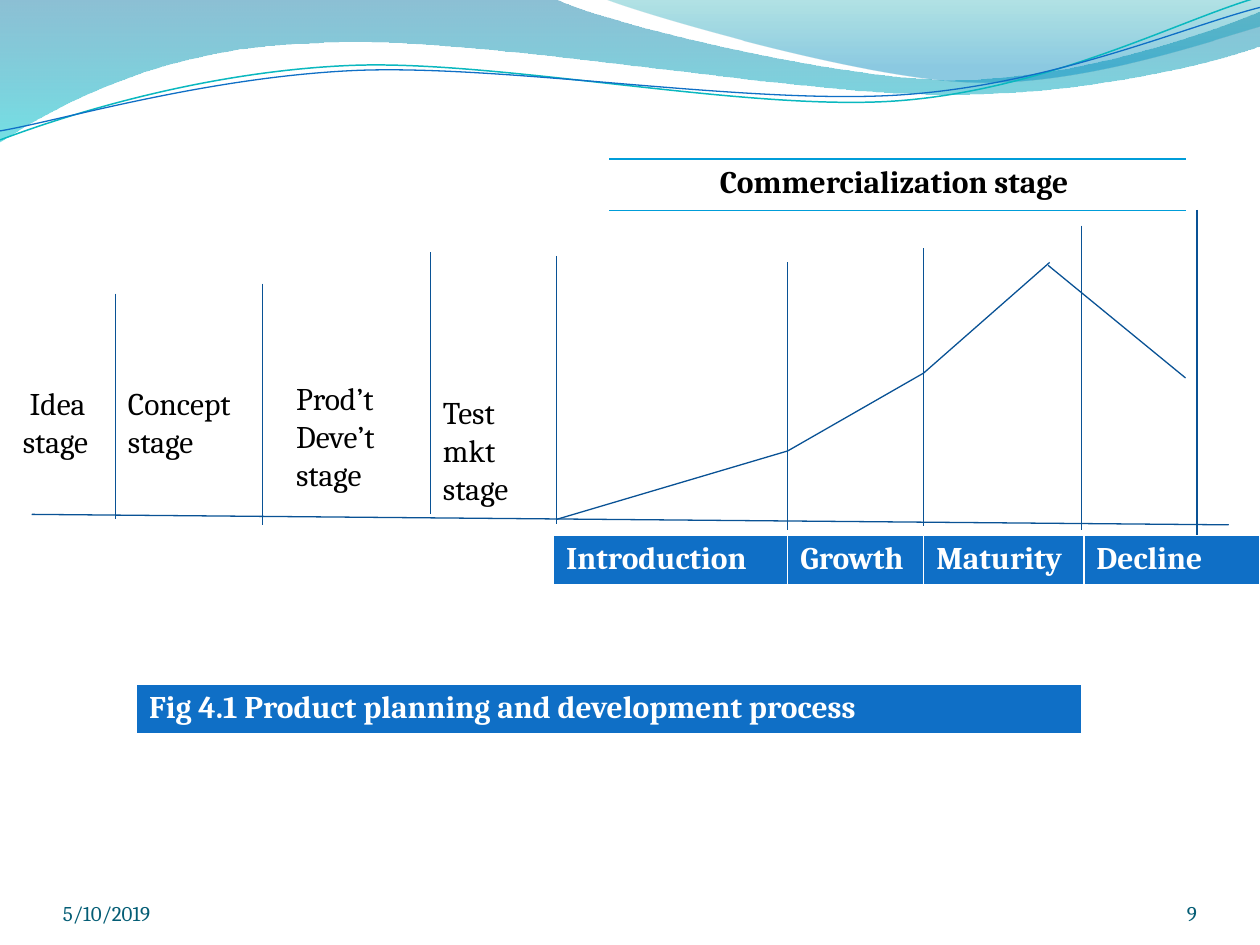
import math

from lxml import etree
from pptx import Presentation
from pptx import util as u
from pptx.dml.color import RGBColor
from pptx.enum import shapes, text
from pptx.oxml.ns import qn

FONT = "Cambria"
COLORS = {"black": "000000", "white": "FFFFFF", "blue": "0F6FC6", "line": "095295",
          "sky": "009DD9", "teal": "0AB8BF", "footer": "045D75", "deep": "0074A1",
          "aqua": "00C6CF", "green": "00A1A9", "azure": "008BBF"}

# All lengths are in centimetres. Outline steps: (x, y) is a straight line,
# (x1, y1, x2, y2, x, y) is a Bezier curve.
BANDS = [  # outline, gradient stops (position, colour, opacity %)
    ([(0, 0), (11.18, -0.03), (12.09, 0.43, 16.87, 1.6, 19.25, 1.6),
      (21.67, 1.6, 24.33, 0.66, 25.4, 0.23), (25.43, 0.91),
      (24.97, 1.12, 22.1, 1.93, 18.95, 1.9), (15.8, 1.9, 9.7, 0.71, 6.53, 0.86),
      (3.28, 0.91, 1.17, 2.11, -0.03, 2.87), (0, 0)],
     [(0, "deep", 45), (1, "aqua", 55)]),
    ([(12.17, -0.03), (12.93, 0.28, 17.32, 1.57, 19.53, 1.65),
      (21.74, 1.75, 24.41, 0.81, 25.4, 0.53), (25.4, 0), (12.17, -0.03)],
     [(0, "green", 30), (0.8, "azure", 45)]),
]
WAVE_TILT = -2.7
WAVES = [  # outline, colour, line width, centre of the tilt
    ([(0, 2.82), (1.22, 2.36, 4.01, 1.45, 7.04, 1.32),
      (10.03, 1.19, 15.06, 2.26, 18.11, 2.03), (21.16, 1.8, 23.83, 0.38, 25.35, -0.05)],
     "teal", 0.85, (12.67, 1.46)),
    ([(0, 2.64), (1.19, 2.44, 4.17, 1.55, 7.19, 1.42),
      (10.24, 1.3, 15.16, 2.13, 18.21, 1.91), (21.23, 1.7, 23.9, 0.53, 25.4, 0.15)],
     "blue", 0.75, (12.69, 1.5)),
]
BASELINE = [(0.64, 10.37), (24.77, 10.58)]
DIVIDERS = [  # x, top, bottom
    (2.33, 5.92, 10.47), (5.29, 5.72, 10.58), (8.68, 5.08, 10.37), (11.22, 5.16, 10.57),
    (15.88, 5.29, 10.69), (18.62, 5, 10.61), (21.8, 4.55, 10.69), (24.13, 4.23, 10.8)]
SALES_RISE = [(11.22, 10.47), (15.88, 9.09), (18.62, 7.52), (21.16, 5.29)]
SALES_FALL = [(21.13, 5.35), (23.9, 7.62)]

STAGES = [  # wording, (left, top, width, height)
    (" Idea stage", (0.21, 7.62, 2.96, 1.8)),
    ("Concept stage", (2.33, 7.62, 2.96, 1.8)),
    ("Prod’t Deve’t stage", (5.72, 7.52, 2.96, 2.57)),
    ("Test mkt stage", (8.68, 7.8, 2.54, 2.57)),
]
FOOTERS = [
    ("9", (22.01, 17.65, 2.12, 1.02), text.PP_ALIGN.RIGHT),
    ("5/10/2019", (1.27, 17.65, 5.93, 1.02), text.PP_ALIGN.LEFT),
]
WHITE_GRID = {"L": ("white", 1), "R": ("white", 1), "T": ("white", 1), "B": ("white", 3)}
SKY_RULES = {"L": None, "R": None, "T": ("sky", 1), "B": ("sky", 1)}
ROW_HEIGHT = 1.03
TABLES = [  # left, top, (wording, width) per column, fill, text colour, borders, alignment
    (11.16, 10.79, [("Introduction", 4.72), ("Growth", 2.74), ("Maturity", 3.23),
                    ("Decline", 3.55)], "blue", "white", WHITE_GRID, text.PP_ALIGN.LEFT),
    (12.28, 3.21, [("Commercialization stage ", 11.63)], None, "black", SKY_RULES,
     text.PP_ALIGN.CENTER),
    (2.75, 13.79, [("Fig 4.1 Product planning and development process", 19.05)],
     "blue", "white", WHITE_GRID, text.PP_ALIGN.LEFT),
]


def rgb(name):
    return RGBColor.from_string(COLORS[name])


def pairs(step):
    return list(zip(step[::2], step[1::2]))


def turn(outline, degrees, centre):
    cos, sin = math.cos(math.radians(degrees)), math.sin(math.radians(degrees))
    cx, cy = centre
    return [tuple(v for x, y in pairs(step)
                  for v in (cx + (x - cx) * cos - (y - cy) * sin,
                            cy + (x - cx) * sin + (y - cy) * cos))
            for step in outline]


def add_outline(page, outline, close=False):
    """Build the outline through its end points, then bend the curved steps."""
    anchors = [(u.Cm(step[-2]), u.Cm(step[-1])) for step in outline]
    builder = page.shapes.build_freeform(*anchors[0])
    builder.add_line_segments(anchors[1:], close=close)
    shape = builder.convert_to_shape()
    shape.shadow.inherit = False
    segments = list(shape.element.spPr.iter(qn("a:lnTo")))
    for segment, step in zip(segments, outline[1:]):
        if len(step) == 2:
            continue
        curve = etree.Element(qn("a:cubicBezTo"))
        for x, y in pairs(step):
            etree.SubElement(curve, qn("a:pt"), x=str(u.Cm(x) - shape.left),
                             y=str(u.Cm(y) - shape.top))
        segment.getparent().replace(segment, curve)
    return shape


def add_band(page, outline, stops):
    band = add_outline(page, outline, True)
    band.line.fill.background()
    band.fill.gradient()
    band.fill.gradient_angle = 270
    for stop, (position, color, _) in zip(band.fill.gradient_stops, stops):
        stop.position = position
        stop.color.rgb = rgb(color)
    for element, (_, _, opacity) in zip(band.element.spPr.iter(qn("a:srgbClr")), stops):
        etree.SubElement(element, qn("a:alpha"), val=str(opacity * 1000))


def draw_line(shape, color="line", width=0.75):
    shape.line.color.rgb = rgb(color)
    shape.line.width = u.Pt(width)


def add_curve(page, outline, *line_format):
    curve = add_outline(page, outline)
    curve.fill.background()
    draw_line(curve, *line_format)
    return curve


def add_line(page, start, end):
    line = page.shapes.add_connector(shapes.MSO_CONNECTOR.STRAIGHT,
                                     *(u.Cm(v) for v in (*start, *end)))
    draw_line(line)
    etree.SubElement(line.element.spPr, qn("a:effectLst"))


def write(frame, words, color, size=18, bold=False, align=text.PP_ALIGN.LEFT):
    frame.text = words
    para = frame.paragraphs[0]
    para.alignment = align
    span = para.runs[0]
    for name, value in {"name": FONT, "size": u.Pt(size), "bold": bold}.items():
        setattr(span.font, name, value)
    span.font.color.rgb = rgb(color)


def add_text(page, words, place, frame_format, **style):
    box = page.shapes.add_textbox(*(u.Cm(v) for v in place))
    for name, value in {"word_wrap": True, **frame_format}.items():
        setattr(box.text_frame, name, value)
    write(box.text_frame, words, **style)


def add_borders(cell_format, borders):
    for index, side in enumerate("LRTB"):
        edge = etree.Element(qn("a:ln" + side))
        if borders[side]:
            color, width = borders[side]
            edge.set("w", str(u.Pt(width)))
            paint = etree.SubElement(edge, qn("a:solidFill"))
            etree.SubElement(paint, qn("a:srgbClr"), val=COLORS[color])
        else:
            etree.SubElement(edge, qn("a:noFill"))
        cell_format.insert(index, edge)


def add_table(page, left, top, columns, fill, color, borders, align):
    width = sum(w for _, w in columns)
    holder = page.shapes.add_table(1, len(columns), u.Cm(left), u.Cm(top),
                                   u.Cm(width), u.Cm(ROW_HEIGHT))
    for index, (words, column_width) in enumerate(columns):
        holder.table.columns[index].width = u.Cm(column_width)
        cell = holder.table.cell(0, index)
        if fill:
            cell.fill.solid()
            cell.fill.fore_color.rgb = rgb(fill)
        else:
            cell.fill.background()
        write(cell.text_frame, words, color, bold=True, align=align)
    for cell_format in holder.element.iter(qn("a:tcPr")):
        add_borders(cell_format, borders)


deck = Presentation()
deck.slide_width, deck.slide_height = u.Cm(25.4), u.Cm(19.05)
page = deck.slides.add_slide(deck.slide_layouts[6])
for band in BANDS:
    add_band(page, *band)
for outline, color, width, centre in WAVES:
    wave = add_curve(page, turn(outline, -WAVE_TILT, centre), color, width)
    wave.rotation = WAVE_TILT
add_line(page, *BASELINE)
for x, top, bottom in DIVIDERS:
    add_line(page, (x, top), (x, bottom))
for words, place in STAGES:
    add_text(page, words, place, {"auto_size": text.MSO_AUTO_SIZE.SHAPE_TO_FIT_TEXT},
             color="black")
for start, end in zip(SALES_RISE, SALES_RISE[1:]):
    add_line(page, start, end)
add_curve(page, SALES_FALL)
for table in TABLES:
    add_table(page, *table)
footer_format = {"vertical_anchor": text.MSO_ANCHOR.BOTTOM,
                 **{f"margin_{side}": 0 for side in ("left", "right", "top", "bottom")}}
for words, place, align in FOOTERS:
    add_text(page, words, place, footer_format, color="footer", size=12, align=align)
deck.save("out.pptx")
